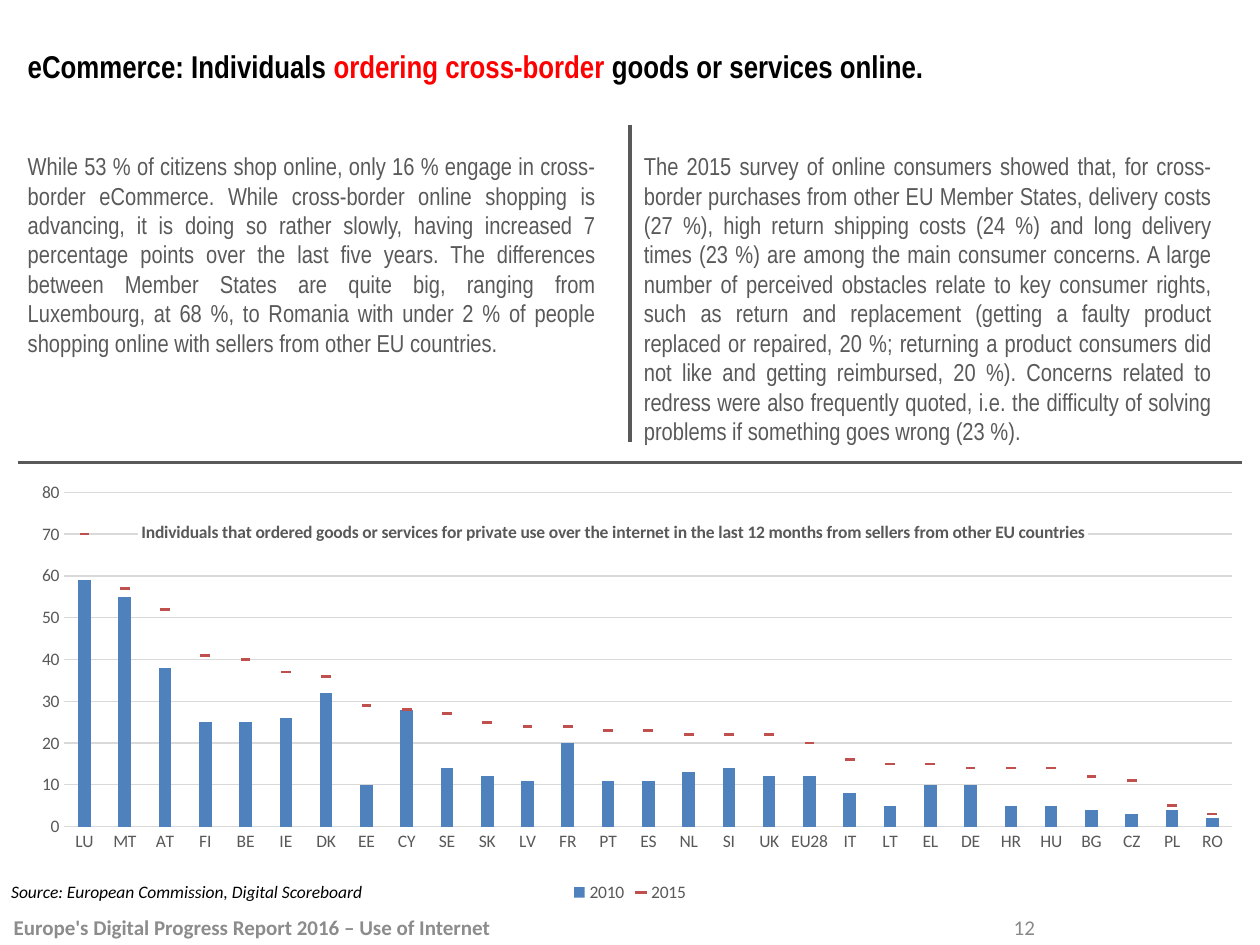
from dataclasses import dataclass
from typing import Any, NamedTuple

from lxml.etree import SubElement
from pptx import Presentation
from pptx.chart.data import CategoryChartData
from pptx.dml.color import RGBColor
from pptx.enum.chart import XL_CHART_TYPE, XL_LEGEND_POSITION, XL_MARKER_STYLE, XL_TICK_MARK
from pptx.enum.shapes import MSO_CONNECTOR
from pptx.enum.text import MSO_ANCHOR, MSO_AUTO_SIZE, PP_ALIGN
from pptx.oxml import parse_xml
from pptx.oxml.ns import nsdecls, qn
from pptx.util import Inches, Pt


@dataclass(frozen=True)
class Theme:
    narrow: str = "Arial Narrow"
    sans: str = "Calibri"
    ink: str = "000000"
    accent: str = "FF0000"
    body: str = "595959"
    footer: str = "8C8C8C"
    number: str = "898989"
    grid: str = "D9D9D9"
    paper: str = "FFFFFF"
    bars: str = "4F81BD"
    dashes: str = "C0504D"
    title_pt: int = 18
    body_pt: int = 14
    footer_pt: int = 12
    small_pt: int = 10


class Box(NamedTuple):
    left: float
    top: float
    width: float
    height: float


class Run(NamedTuple):
    text: str
    color: str


class Label(NamedTuple):
    box: Box
    run: Run
    size: int
    style: dict[str, bool]
    frame: dict[str, Any]
    para: dict[str, Any]


class Rule(NamedTuple):
    x1: float
    y1: float
    x2: float
    y2: float


T = Theme()

TITLE = [
    Run("eCommerce: Individuals ", T.ink),
    Run("ordering cross-border", T.accent),
    Run(" goods or services online.", T.ink),
]
COLUMNS = [
    "While 53 % of citizens shop online, only 16 % engage in cross-border eCommerce. While cross-border online "
    "shopping is advancing, it is doing so rather slowly, having increased 7 percentage points over the last five "
    "years. The differences between Member States are quite big, ranging from Luxembourg, at 68 %, to Romania with "
    "under 2 % of people shopping online with sellers from other EU countries.",
    "The 2015 survey of online consumers showed that, for cross-border purchases from other EU Member States, "
    "delivery costs (27 %), high return shipping costs (24 %) and long delivery times (23 %) are among the main "
    "consumer concerns. A large number of perceived obstacles relate to key consumer rights, such as return and "
    "replacement (getting a faulty product replaced or repaired, 20 %; returning a product consumers did not like "
    "and getting reimbursed, 20 %). Concerns related to redress were also frequently quoted, i.e. the difficulty of "
    "solving problems if something goes wrong (23 %).",
]
RULES = [Rule(5, 0.99, 5, 3.51), Rule(0.14, 3.67, 9.86, 3.67)]
MIDDLE = {"word_wrap": True, "vertical_anchor": MSO_ANCHOR.MIDDLE}
LABELS = [
    Label(Box(-0.01, 6.92, 3.02, 0.28), Run("Source: European Commission, Digital Scoreboard", T.ink),
          T.small_pt, {"italic": True}, {"word_wrap": False}, {"line_spacing": 1.15}),
    Label(Box(0.01, 7.21, 6.23, 0.3), Run("Europe's Digital Progress Report 2016 – Use of Internet", T.footer),
          T.footer_pt, {"bold": True}, MIDDLE, {}),
    Label(Box(7.83, 7.21, 0.6, 0.3), Run("12", T.number),
          T.footer_pt, {}, MIDDLE, {"alignment": PP_ALIGN.CENTER}),
]
CHART_TITLE = ("Individuals that ordered goods or services for private use over the internet "
               "in the last 12 months from sellers from other EU countries")
COUNTRIES = ("LU MT AT FI BE IE DK EE CY SE SK LV FR PT ES NL SI UK EU28 "
             "IT LT EL DE HR HU BG CZ PL RO").split()
SHARES = {
    "2010": [59, 55, 38, 25, 25, 26, 32, 10, 28, 14, 12, 11, 20, 11, 11,
             13, 14, 12, 12, 8, 5, 10, 10, 5, 5, 4, 3, 4, 2],
    "2015": [70, 57, 52, 41, 40, 37, 36, 29, 28, 27, 25, 24, 24, 23, 23,
             22, 22, 22, 20, 16, 15, 15, 14, 14, 14, 12, 11, 5, 3],
}


def assign(obj: Any, values: dict[str, Any]) -> None:
    for name, value in values.items():
        setattr(obj, name, value)


def set_font(font: Any, name: str, size: int, color: str, **style: bool) -> None:
    assign(font, {"name": name, "size": Pt(size), **style})
    font.color.rgb = RGBColor.from_string(color)


def place(sp: Any, box: Box) -> None:
    assign(sp, {name: Inches(value) for name, value in box._asdict().items()})


def set_line(line: Any, color: str, width: float) -> None:
    line.width = Pt(width)
    line.fill.solid()
    line.fill.fore_color.rgb = RGBColor.from_string(color)


def add_rule(s: Any, rule: Rule) -> None:
    line = s.shapes.add_connector(MSO_CONNECTOR.STRAIGHT, *map(Inches, rule))
    set_line(line.line, T.body, 2)
    SubElement(line._element.spPr, qn("a:effectLst"))


def fill_title(sp: Any) -> None:
    place(sp, Box(0.12, 0.12, 9.76, 0.8))
    tf = sp.text_frame
    assign(tf, {"auto_size": MSO_AUTO_SIZE.NONE, **MIDDLE})
    p = tf.paragraphs[0]
    p.alignment = PP_ALIGN.LEFT
    for run in TITLE:
        r = p.add_run()
        r.text = run.text
        set_font(r.font, T.narrow, T.title_pt, run.color, bold=True)


def fill_column(sp: Any, left: float, text: str) -> None:
    place(sp, Box(left, 1.15, 4.71, 2.44))
    tf = sp.text_frame
    assign(tf, {"auto_size": MSO_AUTO_SIZE.NONE, "word_wrap": True})
    p = tf.paragraphs[0]
    pPr = p._p.get_or_add_pPr()
    pPr.set("marL", "0")
    pPr.set("indent", "0")
    SubElement(pPr, qn("a:buNone"))
    assign(p, {"alignment": PP_ALIGN.JUSTIFY, "space_before": Pt(0)})
    r = p.add_run()
    r.text = text
    set_font(r.font, T.narrow, T.body_pt, T.body)


def add_label(s: Any, label: Label) -> None:
    tf = s.shapes.add_textbox(*map(Inches, label.box)).text_frame
    assign(tf, label.frame)
    p = tf.paragraphs[0]
    assign(p, label.para)
    r = p.add_run()
    r.text = label.run.text
    set_font(r.font, T.sans, label.size, label.run.color, **label.style)


def set_layout(parent: Any, index: int, **values: Any) -> None:
    for old in parent.findall(qn("c:layout")):
        parent.remove(old)
    body = "".join(f'<c:{name} val="{value}"/>' for name, value in values.items())
    parent.insert(index, parse_xml(
        f'<c:layout {nsdecls("c")}><c:manualLayout>{body}</c:manualLayout></c:layout>'))


def move_to_line_plot(chart: Any) -> None:
    bars = chart.plots[0]._element
    ser = bars.findall(qn("c:ser"))[1]
    for flag in ser.findall(qn("c:invertIfNegative")):
        ser.remove(flag)
    axes = "".join(f'<c:axId val="{a.get("val")}"/>' for a in bars.findall(qn("c:axId")))
    lines = parse_xml(f'<c:lineChart {nsdecls("c")}><c:grouping val="standard"/><c:varyColors val="0"/>'
                      f'<c:marker val="1"/>{axes}</c:lineChart>')
    lines.insert(2, ser)
    bars.addnext(lines)


def add_shares_chart(s: Any) -> None:
    data = CategoryChartData(number_format="0")
    data.categories = COUNTRIES
    for name, values in SHARES.items():
        data.add_series(name, values)
    box = Box(0.12, 3.83, 9.76, 3.37)
    chart = s.shapes.add_chart(XL_CHART_TYPE.COLUMN_CLUSTERED, *map(Inches, box), data).chart
    set_font(chart.font, T.sans, T.small_pt, T.body)
    move_to_line_plot(chart)
    columns, markers = chart.plots
    assign(columns, {"gap_width": 219, "overlap": -27, "vary_by_categories": False})
    fill = columns.series[0].format.fill
    fill.solid()
    fill.fore_color.rgb = RGBColor.from_string(T.bars)

    later = markers.series[0]
    later.smooth = False
    later.format.line.fill.background()
    assign(later.marker, {"style": XL_MARKER_STYLE.DASH, "size": 5})
    later.marker.format.fill.solid()
    later.marker.format.fill.fore_color.rgb = RGBColor.from_string(T.dashes)
    set_line(later.marker.format.line, T.dashes, 0.75)

    for axis in (chart.category_axis, chart.value_axis):
        assign(axis, {"major_tick_mark": XL_TICK_MARK.NONE, "minor_tick_mark": XL_TICK_MARK.NONE})
        set_font(axis.tick_labels.font, T.sans, T.small_pt, T.body)
    set_line(chart.category_axis.format.line, T.grid, 0.75)
    assign(chart.value_axis, {"minimum_scale": 0, "maximum_scale": 80, "major_unit": 10})
    chart.value_axis.format.line.fill.background()
    set_line(chart.value_axis.major_gridlines.format.line, T.grid, 0.75)

    chart.has_legend = True
    assign(chart.legend, {"position": XL_LEGEND_POSITION.BOTTOM, "include_in_layout": False})
    set_font(chart.legend.font, T.sans, T.small_pt, T.body)

    title = chart.chart_title
    r = title.text_frame.paragraphs[0].add_run()
    r.text = CHART_TITLE
    set_font(r.font, T.sans, T.small_pt, T.body, bold=True)
    title.format.fill.solid()
    title.format.fill.fore_color.rgb = RGBColor.from_string(T.paper)
    set_layout(title._element, 1, xMode="edge", yMode="edge", x=0.1, y=0.08)
    title._element.find(qn("c:overlay")).set("val", "1")
    set_layout(chart._chartSpace.chart.plotArea, 0, layoutTarget="inner", xMode="edge", yMode="edge",
               x=0.04, y=0.02, w=0.95, h=0.79)


def main() -> None:
    prs = Presentation()
    assign(prs, {"slide_width": Inches(10), "slide_height": Inches(7.5)})
    s = prs.slides.add_slide(prs.slide_layouts[3])
    title, *columns = s.placeholders
    fill_title(title)
    for sp, left, text in zip(columns, (0.12, 5.01), COLUMNS):
        fill_column(sp, left, text)
    for rule in RULES:
        add_rule(s, rule)
    add_shares_chart(s)
    for label in LABELS:
        add_label(s, label)
    prs.save("out.pptx")


if __name__ == "__main__":
    main()
